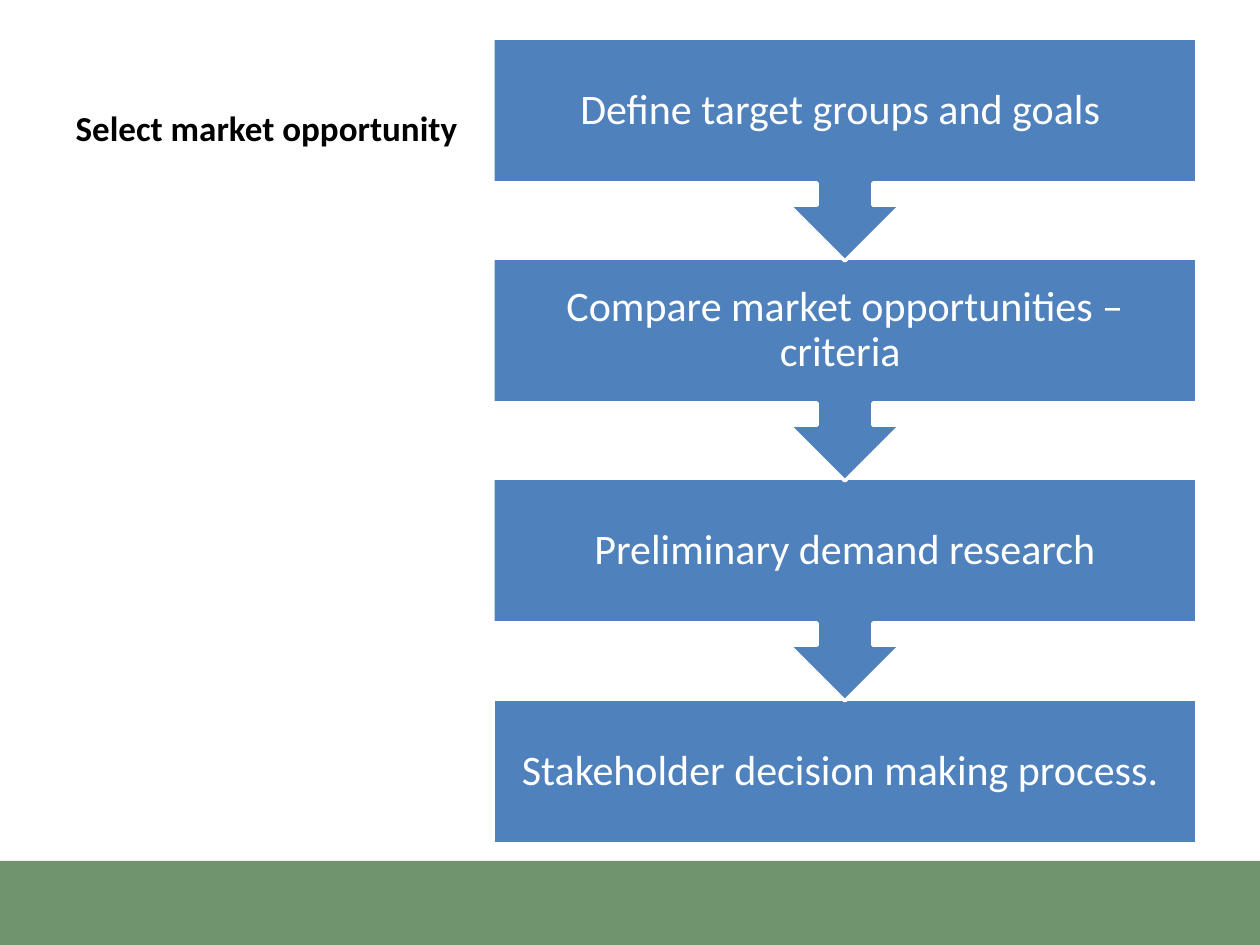
from pptx import Presentation
from pptx.dml.color import RGBColor
from pptx.enum.shapes import MSO_SHAPE
from pptx.enum.text import MSO_ANCHOR, MSO_AUTO_SIZE, PP_ALIGN
from pptx.util import Pt

PX = 914400 // 126
STEPS = [
    "Define target groups and goals ",
    "Compare market opportunities – criteria ",
    "Preliminary demand research",
    "Stakeholder decision making process. ",
]
LEFT, TOP, WIDTH = 493, 38, 704
BOX, CALLOUT = 145, 223  # step height without and with its arrow
LAST_TOP = 699


def color(code):
    return RGBColor.from_string(code)


class Deck:
    font = "Calibri"
    blue, green, white, black = "4F81BD", "70946B", "FFFFFF", "000000"

    def __init__(self, width, height):
        self.prs = Presentation()
        self.prs.slide_width = width * PX
        self.prs.slide_height = height * PX
        self.slide = self.prs.slides.add_slide(self.prs.slide_layouts[5])

    def style(self, par, size, tone, align, bold=False):
        par.alignment = align
        par.font.name = self.font
        par.font.size = Pt(size)
        par.font.bold = bold
        par.font.color.rgb = color(tone)

    def title(self, text, x, y, w, h, lift):
        """Place the title with its last line lifted above the bottom edge."""
        shape = self.slide.shapes.title
        shape.left, shape.top = x * PX, y * PX
        shape.width, shape.height = w * PX, h * PX
        frame = shape.text_frame
        frame.text = text
        frame.auto_size = MSO_AUTO_SIZE.NONE
        frame.vertical_anchor = MSO_ANCHOR.BOTTOM
        frame.margin_bottom = lift * PX
        self.style(frame.paragraphs[0], 20, self.black, PP_ALIGN.LEFT, True)

    def shape(self, kind, x, y, w, h, fill):
        shape = self.slide.shapes.add_shape(kind, x * PX, y * PX, w * PX, h * PX)
        shape.shadow.inherit = False
        shape.fill.solid()
        shape.fill.fore_color.rgb = color(fill)
        shape.line.fill.background()
        return shape

    def step(self, text, y, last):
        """Add a box; every step but the last points down to the next."""
        kind = MSO_SHAPE.RECTANGLE if last else MSO_SHAPE.DOWN_ARROW_CALLOUT
        height = BOX if last else CALLOUT
        shape = self.shape(kind, LEFT, y, WIDTH, height, self.blue)
        if not last:
            shape.adjustments[3] = BOX / CALLOUT
        shape.line.color.rgb = color(self.white)
        shape.line.width = Pt(2)
        frame = shape.text_frame
        frame.text = text
        frame.word_wrap = True
        frame.vertical_anchor = MSO_ANCHOR.MIDDLE
        frame.margin_left = frame.margin_right = 24 * PX
        frame.margin_top = frame.margin_bottom = 24 * PX
        par = frame.paragraphs[0]
        par.line_spacing = 0.9
        self.style(par, 24, self.white, PP_ALIGN.CENTER)


def main():
    deck = Deck(1260, 945)
    deck.shape(MSO_SHAPE.RECTANGLE, 0, 861, 1260, 84, deck.green)
    deck.title("Select market opportunity", 63, 38, 415, 160, 49)
    end = len(STEPS) - 1
    # Built from the bottom up, so each arrow tip lies over the next box.
    for i in range(end, -1, -1):
        deck.step(STEPS[i], TOP + (LAST_TOP - TOP) * i // end, i == end)
    deck.prs.save("out.pptx")


if __name__ == "__main__":
    main()
